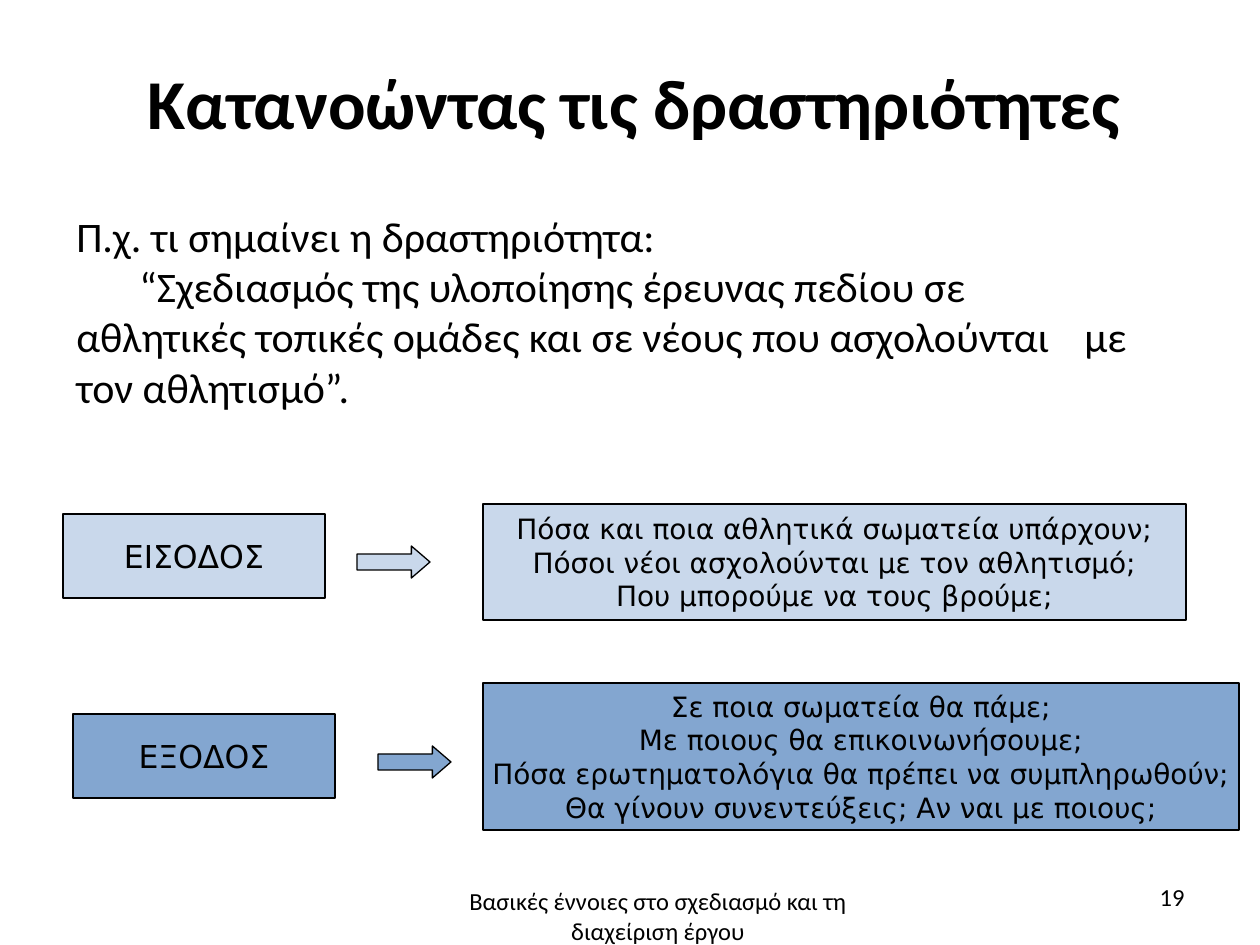
from lxml import etree
from pptx import Presentation
from pptx import util as u
from pptx.dml.color import RGBColor
from pptx.enum import shapes, text
from pptx.oxml.ns import qn

PX = 914400 / 126
BLACK = RGBColor(0x00, 0x00, 0x00)
BLUE = RGBColor(0x4F, 0x81, 0xBD)
CENTER = text.PP_ALIGN.CENTER
LABEL_SIZE = (262, 84)
ARROW_SIZE = (73, 32)
DETAIL_LEFT = 420


def px(*lengths):
    return [u.Emu(round(length * PX)) for length in lengths]


def write(frame, lines, size, font, align, bold=False):
    for index, line in enumerate(lines):
        para = frame.add_paragraph() if index else frame.paragraphs[0]
        para.alignment = align
        span = para.add_run()
        span.text = line
        span.font.size = u.Pt(size)
        span.font.name = font
        span.font.bold = bold
        span.font.color.rgb = BLACK


def text_region(page, place, lines, size, align):
    box = page.shapes.add_textbox(*px(*place))
    box.text_frame.word_wrap = True
    write(box.text_frame, lines, size, "Calibri", align)


def title_region(page, place):
    box = page.shapes.add_textbox(*px(*place))
    frame = box.text_frame
    frame.word_wrap = True
    frame.vertical_anchor = text.MSO_ANCHOR.MIDDLE
    frame.margin_left = frame.margin_right = frame.margin_bottom = 0
    frame.margin_top = u.Inches(0.02)
    write(frame, ["Κατανοώντας τις δραστηριότητες"], 40, "Calibri", CENTER, True)


def tinted_shape(page, kind, place, opacity):
    shape = page.shapes.add_shape(kind, *px(*place))
    shape.shadow.inherit = False
    shape.fill.solid()
    shape.fill.fore_color.rgb = BLUE
    color = shape.fill._xPr.find(qn("a:solidFill"))[0]
    etree.SubElement(color, qn("a:alpha")).set("val", str(opacity * 1000))
    shape.line.color.rgb = BLACK
    shape.line.width = u.Pt(0.75)
    return shape


def tinted_box(page, place, opacity, lines, size):
    box = tinted_shape(page, shapes.MSO_SHAPE.RECTANGLE, place, opacity)
    frame = box.text_frame
    frame.word_wrap = False
    frame.vertical_anchor = text.MSO_ANCHOR.MIDDLE
    write(frame, lines, size, "DejaVu Sans", CENTER)


def flow_region(page, place, label_drop, arrow_shift, opacity, label, lines):
    left, top, width, height = place
    label_top = top + label_drop
    tinted_box(page, (left, label_top, *LABEL_SIZE), opacity, [label], 18)
    detail_left = DETAIL_LEFT + 63
    detail = (detail_left, top, left + width - detail_left, height)
    tinted_box(page, detail, opacity, lines, 16)
    arrow_place = (left + arrow_shift, label_top + 32, *ARROW_SIZE)
    arrow = tinted_shape(page, shapes.MSO_SHAPE.RIGHT_ARROW, arrow_place, opacity)
    arrow.adjustments[0] = 0.5
    arrow.adjustments[1] = 0.58


def main():
    deck = Presentation()
    deck.slide_width, deck.slide_height = px(1260, 945)
    page = deck.slides.add_slide(deck.slide_layouts[6])

    title_region(page, (54, 6, 1160, 189))
    text_region(page, (64, 204, 1133, 258), [
        "Π.χ. τι σημαίνει η δραστηριότητα:",
        "\t“Σχεδιασμός της υλοποίησης έρευνας πεδίου σε "
        "\tαθλητικές τοπικές ομάδες και σε νέους που ασχολούνται "
        "\tμε τον αθλητισμό”.",
    ], 24, text.PP_ALIGN.LEFT)
    flow_region(page, (63, 504, 1123, 116), 10, 294, 30, "ΕΙΣΟΔΟΣ", [
        "Πόσα και ποια αθλητικά σωματεία υπάρχουν;",
        "Πόσοι νέοι ασχολούνται με τον αθλητισμό;",
        "Που μπορούμε να τους βρούμε;",
    ])
    flow_region(page, (73, 683, 1166, 147), 31, 305, 70, "ΕΞΟΔΟΣ", [
        "Σε ποια σωματεία θα πάμε;",
        "Με ποιους θα επικοινωνήσουμε;",
        "Πόσα ερωτηματολόγια θα πρέπει να συμπληρωθούν;",
        "Θα γίνουν συνεντεύξεις; Αν ναι με ποιους;",
    ])
    text_region(page, (438, 880, 440, 69),
                ["Βασικές έννοιες στο σχεδιασμό και τη διαχείριση έργου"],
                14, CENTER)
    text_region(page, (903, 876, 294, 50), ["19"], 14, text.PP_ALIGN.RIGHT)

    deck.save("out.pptx")


if __name__ == "__main__":
    main()
